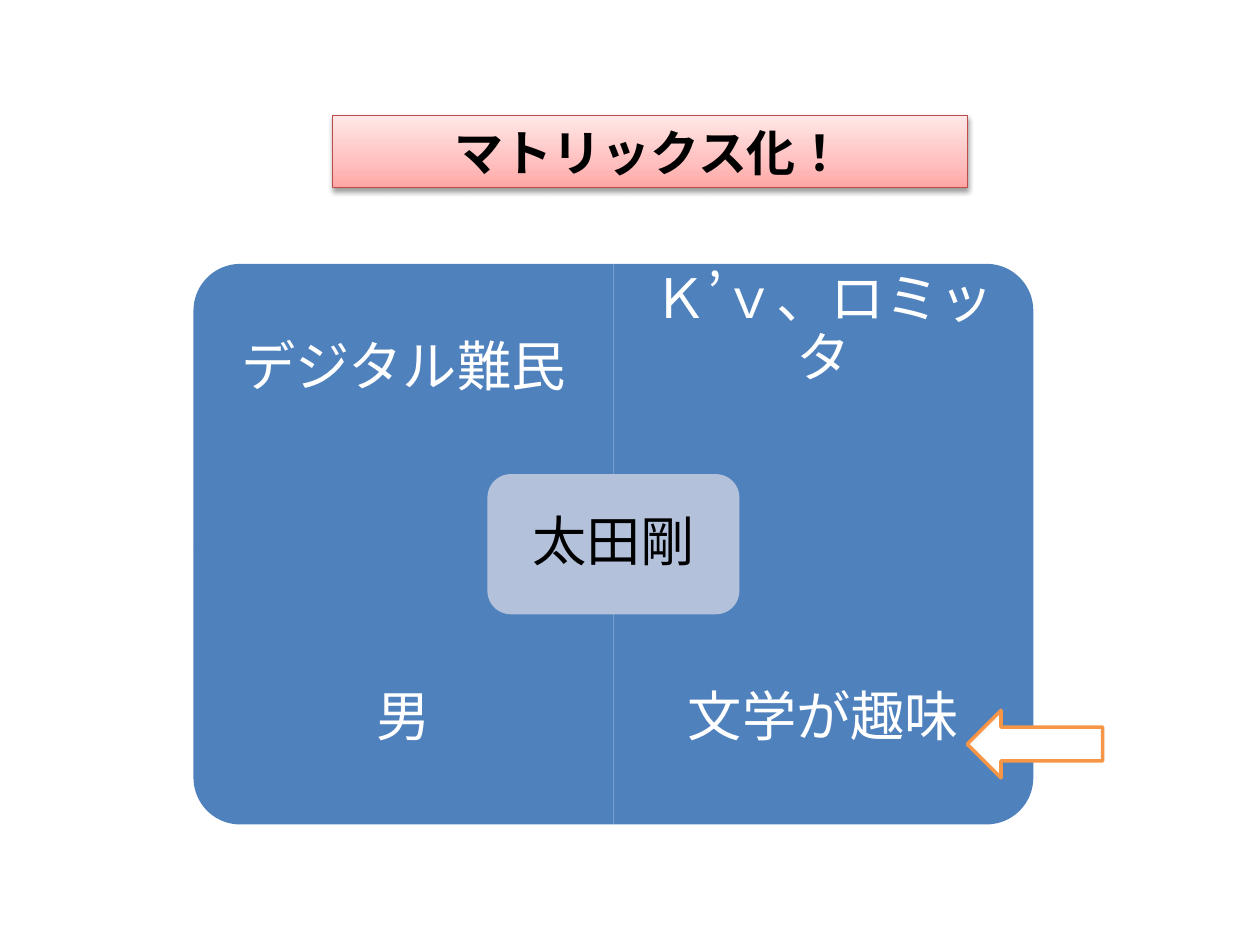
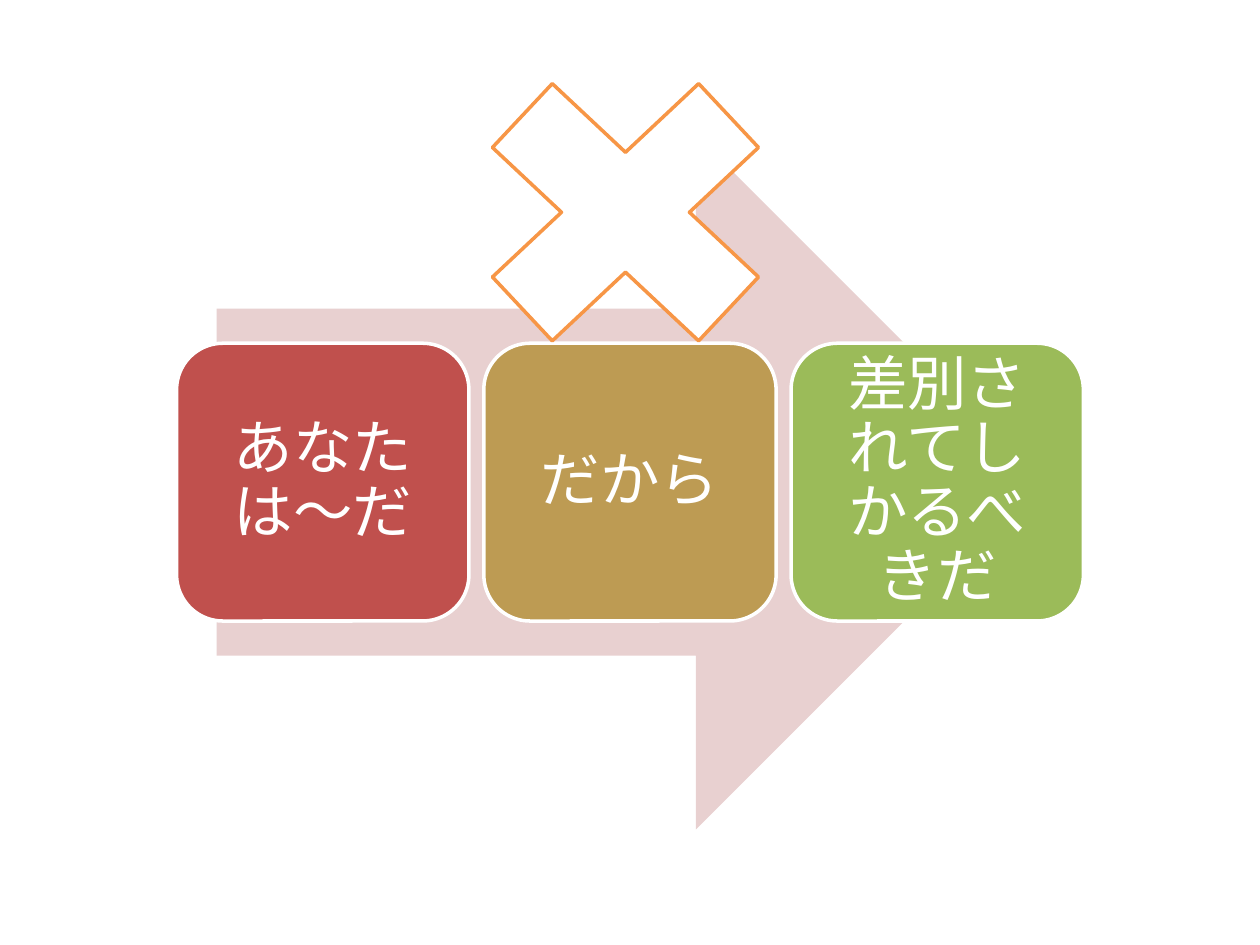
import copy

import lxml.etree
import pptx
import pptx.dml.color
import pptx.enum.lang
import pptx.enum.shapes
import pptx.enum.text
import pptx.oxml.ns
import pptx.util
from pptx.util import Cm

SHAPES = pptx.enum.shapes.MSO_SHAPE
FONT = "Calibri"
COLOURS = {
    "white": "FFFFFF",
    "black": "000000",
    "quadrant": "4F81BD",
    "centre": "B3C1DB",
    "marker": "F79646",
    "banner_line": "BF4C48",
    "banner_bottom": "FFA6A5",
    "banner_middle": "FFC0BF",
    "banner_top": "FFE7E7",
    "flow": "E8D0D0",
    "red": "C0504D",
    "gold": "BD9B53",
    "green": "9BBB59",
}


def colour(name):
    """Return the named colour."""
    return pptx.dml.color.RGBColor.from_string(COLOURS[name])


def add_shape(slide, kind, box, fill, line=None, line_width=2):
    """Add a flat preset shape in a box of left, top, width, height in cm."""
    shape = slide.shapes.add_shape(kind, *map(Cm, box))
    shape.shadow.inherit = False
    shape.fill.solid()
    shape.fill.fore_color.rgb = colour(fill)
    if line:
        shape.line.color.rgb = colour(line)
        shape.line.width = pptx.util.Pt(line_width)
    else:
        shape.line.fill.background()
    return shape


def set_text(shape, text, size, font_colour="white", insets=None, bold=False, spacing=0.9):
    """Write centred text; insets are left, top, right, bottom in cm."""
    frame = shape.text_frame
    frame.word_wrap = True
    frame.vertical_anchor = pptx.enum.text.MSO_ANCHOR.MIDDLE
    if insets:
        (frame.margin_left, frame.margin_top,
         frame.margin_right, frame.margin_bottom) = map(Cm, insets)
    paragraph = frame.paragraphs[0]
    paragraph.text = text
    paragraph.alignment = pptx.enum.text.PP_ALIGN.CENTER
    paragraph.line_spacing = spacing
    paragraph.font.name = FONT
    paragraph.font.size = pptx.util.Pt(size)
    paragraph.font.bold = bold
    paragraph.font.color.rgb = colour(font_colour)
    paragraph.font.language_id = pptx.enum.lang.MSO_LANGUAGE_ID.JAPANESE


def add_banner(slide, box, text):
    """Add the title banner with its gradient and soft shadow."""
    banner = add_shape(slide, SHAPES.RECTANGLE, box, "white", "banner_line", 0.75)
    banner.fill.gradient()
    banner.fill.gradient_angle = 90
    properties = banner._element.spPr
    stop_list = properties.find(".//" + pptx.oxml.ns.qn("a:gsLst"))
    stop_list.append(copy.deepcopy(stop_list[-1]))
    stops = [(0, "banner_bottom"), (0.35, "banner_middle"), (1, "banner_top")]
    for stop, (position, name) in zip(banner.fill.gradient_stops, stops):
        stop.position = position
        stop.color.rgb = colour(name)
    effects = properties.find(pptx.oxml.ns.qn("a:effectLst"))
    shadow = lxml.etree.SubElement(
        effects, pptx.oxml.ns.qn("a:outerShdw"),
        blurRad="40000", dist="20000", dir="5400000", rotWithShape="0")
    tone = lxml.etree.SubElement(shadow, pptx.oxml.ns.qn("a:srgbClr"), val=COLOURS["black"])
    lxml.etree.SubElement(tone, pptx.oxml.ns.qn("a:alpha"), val="38000")
    set_text(banner, text, 28, "black", bold=True, spacing=1)


def add_quadrant(slide, box, rotation, text, text_top, insets):
    """Add one quadrant, its round corner turned outwards, and its label."""
    left, top, width, height = box
    outline = box
    if rotation % 180:
        shift = (width - height) / 2
        outline = (left + shift, top - shift, height, width)
    quadrant = add_shape(slide, SHAPES.ROUND_1_RECTANGLE, outline, "quadrant")
    quadrant.rotation = rotation
    label = slide.shapes.add_textbox(*map(Cm, (left, text_top, width, height * 0.75)))
    set_text(label, text, 31, insets=insets)


def add_matrix(slide, box, quadrants, centre_text):
    """Add a two by two matrix with a label over its centre."""
    left, top, width, height = box
    cell_width, cell_height = width / 2, height / 2
    for index, (text, rotation, insets) in enumerate(quadrants):
        row, column = divmod(index, 2)
        cell = (left + column * cell_width, top + row * cell_height, cell_width, cell_height)
        text_top = cell[1] + row * cell_height / 4
        add_quadrant(slide, cell, rotation, text, text_top, insets)
    centre_width, centre_height = cell_width * 0.6, cell_height / 2
    centre_box = (left + (width - centre_width) / 2, top + (height - centre_height) / 2,
                  centre_width, centre_height)
    centre = add_shape(slide, SHAPES.ROUNDED_RECTANGLE, centre_box, "centre")
    set_text(centre, centre_text, 31, "black", (0.33,) * 4)


def add_process(slide, box, steps):
    """Add equal steps in a row over a broad arrow."""
    left, top, width, height = box
    gap, step_height, arrow_inset = 0.3, height * 0.4, 0.81
    step_width = (width - gap * (len(steps) - 1)) / len(steps)
    arrow_box = (left + arrow_inset, top, width - 2 * arrow_inset, height)
    add_shape(slide, SHAPES.RIGHT_ARROW, arrow_box, "flow")
    for index, (text, fill) in enumerate(steps):
        step_box = (left + index * (step_width + gap), top + (height - step_height) / 2,
                    step_width, step_height)
        step = add_shape(slide, SHAPES.ROUNDED_RECTANGLE, step_box, fill, "white")
        set_text(step, text, 34, insets=(0.36,) * 4)


def build_matrix_slide(slide):
    """Build the matrix slide."""
    even = (0.6,) * 4
    raised = (0.6, 0, 0.6, 1.55)
    quadrants = [
        ("デジタル難民", 270, even),
        ("Ｋ’ｖ、ロミッタ", 0, raised),
        ("男", 180, even),
        ("文学が趣味", 90, even),
    ]
    add_matrix(slide, (3.9, 5.32, 16.93, 11.3), quadrants, "太田剛")
    add_banner(slide, (6.7, 2.33, 12.8, 1.45), "マトリックス化！")
    add_shape(slide, SHAPES.LEFT_ARROW, (19.5, 14.32, 2.73, 1.36), "white", "marker")


def build_process_slide(slide):
    """Build the slide with the crossed-out line of reasoning."""
    steps = [("あなたは～だ", "red"), ("だから", "gold"), ("差別されてしかるべきだ", "green")]
    add_process(slide, (3.56, 2.72, 18.28, 14), steps)
    add_shape(slide, SHAPES.MATH_MULTIPLY, (8.61, 0.53, 8, 7.5), "white", "marker")


def main():
    """Build and save the presentation."""
    presentation = pptx.Presentation()
    presentation.slide_width, presentation.slide_height = Cm(25.4), Cm(19.05)
    for build in (build_matrix_slide, build_process_slide):
        build(presentation.slides.add_slide(presentation.slide_layouts[6]))
    presentation.save("out.pptx")


if __name__ == "__main__":
    main()
